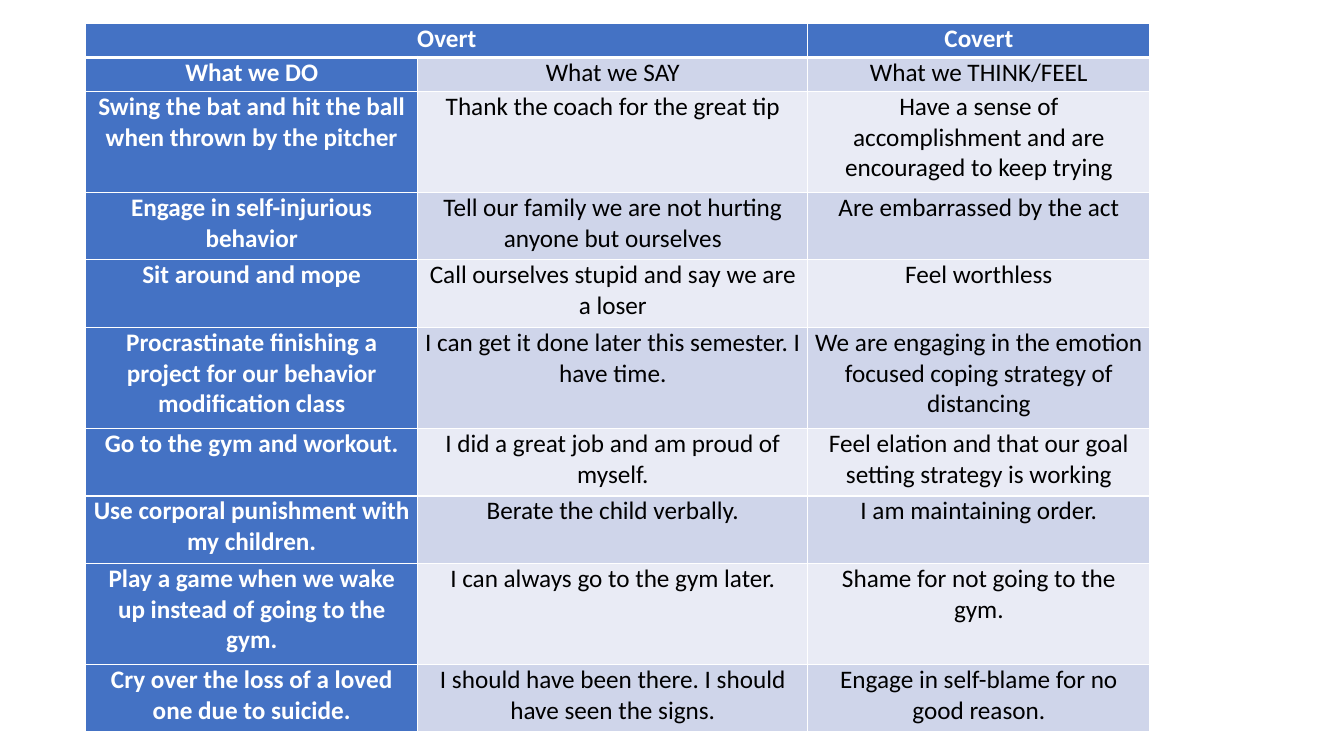
from lxml.etree import SubElement
from pptx import Presentation
from pptx.dml.color import RGBColor
from pptx.enum.text import PP_ALIGN
from pptx.oxml.ns import qn
from pptx.util import Cm, Pt

ROWS = [
    ("Overt", "", "Covert"),
    ("What we DO", "What we SAY", "What we THINK/FEEL"),
    ("Swing the bat and hit the ball when thrown by the pitcher",
     "Thank the coach for the great tip",
     "Have a sense of accomplishment and are encouraged to keep trying"),
    ("Engage in self-injurious behavior",
     "Tell our family we are not hurting anyone but ourselves",
     "Are embarrassed by the act"),
    ("Sit around and mope",
     "Call ourselves stupid and say we are a loser",
     "Feel worthless"),
    ("Procrastinate finishing a project for our behavior modification class",
     "I can get it done later this semester. I have time.",
     "We are engaging in the emotion focused coping strategy of distancing"),
    ("Go to the gym and workout.",
     "I did a great job and am proud of myself.",
     "Feel elation and that our goal setting strategy is working"),
    ("Use corporal punishment with my children.",
     "Berate the child verbally.",
     "I am maintaining order."),
    ("Play a game when we wake up instead of going to the gym.",
     "I can always go to the gym later.",
     "Shame for not going to the gym."),
    ("Cry over the loss of a loved one due to suicide.",
     "I should have been there. I should have seen the signs.",
     "Engage in self-blame for no good reason."),
]
LINES_PER_ROW = [1, 1, 3, 2, 2, 3, 2, 2, 3, 2]
LINE_HEIGHT = 0.85
COLUMN_WIDTHS = [8.37, 9.83, 8.62]
LEFT, TOP = 2.16, 0.6
COLORS = {"heading": "4472C4", "dark band": "CFD5EA", "light band": "E9EBF5",
          "white": "FFFFFF", "black": "000000"}
CELL_FORMAT = {"margin_left": Cm(0.18), "margin_right": Cm(0.18),
               "margin_top": 0, "margin_bottom": 0}
FONT_FORMAT = {"name": "Calibri", "size": Pt(18)}


def apply(target, values):
    for name, value in values.items():
        setattr(target, name, value)


def add_borders(cell, row):
    properties = cell._tc.get_or_add_tcPr()
    widths = {"lnL": 1, "lnR": 1, "lnT": 3 if row == 1 else 1, "lnB": 3 if row == 0 else 1}
    for side, width in widths.items():
        line = SubElement(properties, qn(f"a:{side}"), w=str(Pt(width)))
        fill = SubElement(line, qn("a:solidFill"))
        SubElement(fill, qn("a:srgbClr"), val=COLORS["white"])


def fill_cell(cell, text, row, column):
    heading = row == 0 or column == 0
    band = "heading" if heading else "dark band" if row % 2 else "light band"
    add_borders(cell, row)
    apply(cell, CELL_FORMAT)
    cell.fill.solid()
    cell.fill.fore_color.rgb = RGBColor.from_string(COLORS[band])
    if text:
        para = cell.text_frame.paragraphs[0]
        para.alignment = PP_ALIGN.CENTER
        span = para.add_run()
        span.text = text
        apply(span.font, FONT_FORMAT)
        span.font.bold = heading
        span.font.color.rgb = RGBColor.from_string(COLORS["white" if heading else "black"])


def main():
    deck = Presentation()
    deck.slide_width, deck.slide_height = Cm(33.87), Cm(19.05)
    page = deck.slides.add_slide(deck.slide_layouts[6])
    table = page.shapes.add_table(
        len(ROWS), len(COLUMN_WIDTHS), Cm(LEFT), Cm(TOP),
        Cm(sum(COLUMN_WIDTHS)), Cm(sum(LINES_PER_ROW) * LINE_HEIGHT)).table
    for column, width in zip(table.columns, COLUMN_WIDTHS):
        column.width = Cm(width)
    for row, lines in zip(table.rows, LINES_PER_ROW):
        row.height = Cm(lines * LINE_HEIGHT)
    for row, texts in enumerate(ROWS):
        for column, text in enumerate(texts):
            fill_cell(table.cell(row, column), text, row, column)
    table.cell(0, 0).merge(table.cell(0, 1))
    deck.save("out.pptx")


if __name__ == "__main__":
    main()
